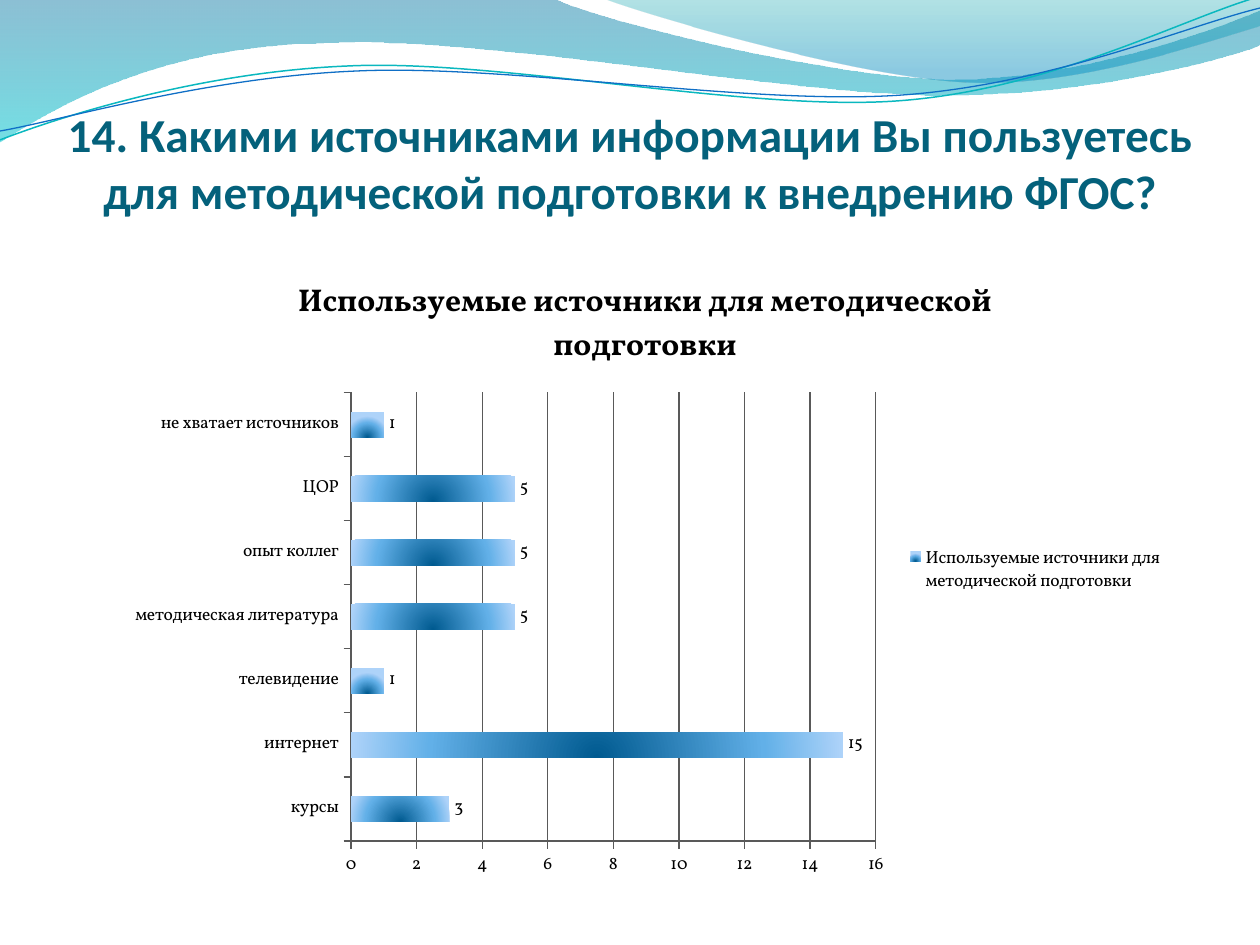
import math

import pptx
import pptx.chart.data
import pptx.dml.color
import pptx.enum.chart
import pptx.enum.text
import pptx.oxml
import pptx.oxml.ns
import pptx.util

PX = 914400 // 126
COLORS = {"title": "04617B", "text": "000000", "axis": "595959",
          "teal": "0AB8BF", "blue": "0F6FC6"}

TITLE = "14. Какими источниками информации Вы пользуетесь для методической подготовки к внедрению ФГОС?"
SERIES = "Используемые источники для методической подготовки"
SOURCES = [("курсы", 3), ("интернет", 15), ("телевидение", 1),
           ("методическая литература", 5), ("опыт коллег", 5),
           ("ЦОР", 5), ("не хватает источников", 1)]

# Outlines in px: a pair is a straight step, six numbers are a cubic curve.
# Gradient stops: position %, colour, opacity %
WAVES = [
    {"points": [(0, 0), (554, -1), (600, 21, 837, 79, 955, 79),
                (1075, 79, 1207, 33, 1260, 11), (1261, 45),
                (1239, 55, 1096, 96, 940, 95), (784, 95, 481, 35, 324, 43),
                (163, 45, 58, 105, -1, 142)],
     "stops": [(0, "0074A1", 45), (100, "00C6CF", 55)]},
    {"points": [(604, -1), (641, 14, 859, 78, 969, 82),
                (1079, 87, 1211, 40, 1260, 26), (1260, 0)],
     "stops": [(0, "00A1A9", 30), (80, "008BBF", 45)]},
    {"points": [(0, 140), (60, 117, 199, 72, 349, 66),
                (498, 59, 747, 112, 898, 101), (1050, 90, 1182, 19, 1258, -3)],
     "line": ("teal", 0.85), "center": (629, 72)},
    {"points": [(0, 131), (59, 121, 207, 77, 357, 71),
                (508, 64, 752, 106, 903, 95), (1053, 84, 1186, 26, 1260, 8)],
     "line": ("blue", 0.75), "center": (629, 74)},
]
TILT = 2.7  # degrees, counter-clockwise
BAR_STOPS = [(0, "005A90", 100), (68, "62B0E8", 100), (100, "AED3F9", 100)]
LINEAR = '<a:lin ang="5400000" scaled="0"/>'
RADIAL = '<a:path path="circle"><a:fillToRect l="50000" t="100000" r="50000"/></a:path>'


def px(*values):
    return [v * PX for v in values]


def rgb(name):
    return pptx.dml.color.RGBColor.from_string(COLORS[name])


def set_gradient(fill, sp_pr, stops, shading):
    fill.solid()
    marks = "".join(
        f'<a:gs pos="{pos * 1000}"><a:srgbClr val="{color}">'
        f'<a:alpha val="{alpha * 1000}"/></a:srgbClr></a:gs>'
        for pos, color, alpha in stops)
    grad = pptx.oxml.parse_xml(
        f'<a:gradFill {pptx.oxml.ns.nsdecls("a")} rotWithShape="1">'
        f'<a:gsLst>{marks}</a:gsLst>{shading}</a:gradFill>')
    sp_pr.replace(sp_pr.find(pptx.oxml.ns.qn("a:solidFill")), grad)


def level(point, center):
    """Turn a point back to where it lies before the shape is tilted."""
    a = math.radians(TILT)
    dx, dy = point[0] - center[0], point[1] - center[1]
    return (center[0] + dx * math.cos(a) - dy * math.sin(a),
            center[1] + dx * math.sin(a) + dy * math.cos(a))


def bend(sp, steps):
    """Join each three straight steps that stand for a curve into one curve."""
    qn = pptx.oxml.ns.qn
    segments = iter(list(sp._element.iter(qn("a:lnTo"))))
    for step in steps:
        first = next(segments)
        if len(step) == 6:
            first.tag = qn("a:cubicBezTo")
            for _ in range(2):
                extra = next(segments)
                first.append(extra[0])
                extra.getparent().remove(extra)


def add_wave(s, points, stops=None, line=None, center=None):
    flat = [step[i:i + 2] for step in points for i in range(0, len(step), 2)]
    if center:
        flat = [level(point, center) for point in flat]
    vertices = [tuple(round(v * PX) for v in point) for point in flat]
    builder = s.shapes.build_freeform(*vertices[0])
    builder.add_line_segments(vertices[1:], close=stops is not None)
    sp = builder.convert_to_shape()
    bend(sp, points[1:])
    sp.shadow.inherit = False
    if stops:
        sp.line.fill.background()
        set_gradient(sp.fill, sp._element.spPr, stops, LINEAR)
    else:
        sp.rotation = 360 - TILT
        sp.fill.background()
        sp.line.color.rgb = rgb(line[0])
        sp.line.width = pptx.util.Pt(line[1])


def format_font(font, size, face="Vollkorn", color="text", bold=False):
    font.size = pptx.util.Pt(size)
    font.name = face
    font.bold = bold
    font.color.rgb = rgb(color)


def write(tf, text, align=pptx.enum.text.PP_ALIGN.CENTER, **style):
    p = tf.paragraphs[0]
    p.alignment = align
    r = p.add_run()
    r.text = text
    format_font(r.font, **style)


def add_source_chart(s):
    data = pptx.chart.data.CategoryChartData()
    data.categories = [name for name, _ in SOURCES]
    data.add_series(SERIES, [value for _, value in SOURCES])
    chart = s.shapes.add_chart(pptx.enum.chart.XL_CHART_TYPE.BAR_CLUSTERED,
                               *px(114, 252, 1062, 638), data).chart
    format_font(chart.font, 10)
    chart.has_title = True
    write(chart.chart_title.text_frame, SERIES, size=18, bold=True)
    chart.chart_title.include_in_layout = False
    chart.has_legend = True
    chart.legend.position = pptx.enum.chart.XL_LEGEND_POSITION.RIGHT
    chart.legend.include_in_layout = False

    # Axes
    value_axis = chart.value_axis
    value_axis.minimum_scale, value_axis.maximum_scale = 0, 16
    value_axis.major_unit = 2
    value_axis.has_major_gridlines = True
    for part in (value_axis, chart.category_axis, value_axis.major_gridlines):
        part.format.line.color.rgb = rgb("axis")
        part.format.line.width = pptx.util.Pt(0.75)
    for axis in (value_axis, chart.category_axis):
        axis.major_tick_mark = pptx.enum.chart.XL_TICK_MARK.OUTSIDE

    # Bars and values
    plot = chart.plots[0]
    plot.vary_by_categories = False
    plot.gap_width = 150
    plot.has_data_labels = True
    plot.data_labels.show_value = True
    plot.data_labels.position = pptx.enum.chart.XL_LABEL_POSITION.OUTSIDE_END
    series = plot.series[0]
    set_gradient(series.format.fill, series._element.get_or_add_spPr(),
                 BAR_STOPS, RADIAL)


def main():
    prs = pptx.Presentation()
    prs.slide_width, prs.slide_height = px(1260, 945)
    s = prs.slides.add_slide(prs.slide_layouts[6])

    # Waves along the top
    for wave in WAVES:
        add_wave(s, **wave)

    # Title
    tf = s.shapes.add_textbox(*px(63, 97, 1134, 227)).text_frame
    tf.word_wrap = True
    tf.vertical_anchor = pptx.enum.text.MSO_ANCHOR.BOTTOM
    tf.margin_left, tf.margin_top, tf.margin_right, tf.margin_bottom = px(0, 6, 0, 105)
    write(tf, TITLE, size=27, face="Calibri", color="title", bold=True)

    add_source_chart(s)
    prs.save("out.pptx")


if __name__ == "__main__":
    main()
